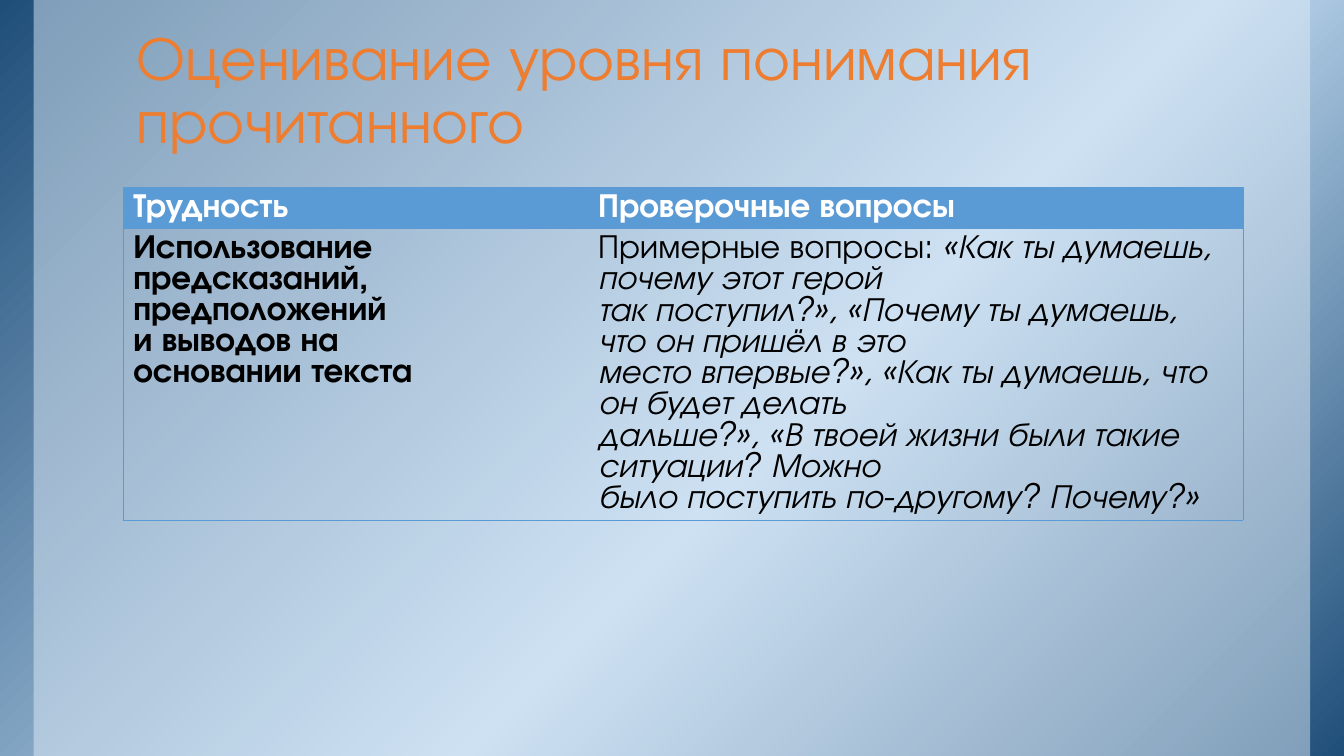
from lxml import etree
from pptx import Presentation
from pptx.dml.color import RGBColor
from pptx.enum.shapes import MSO_SHAPE
from pptx.enum.text import MSO_ANCHOR, MSO_AUTO_SIZE, PP_ALIGN
from pptx.oxml import parse_xml
from pptx.oxml.ns import qn
from pptx.util import Pt

RECTANGLE = MSO_SHAPE.RECTANGLE
BOTTOM = MSO_ANCHOR.BOTTOM
NO_AUTOFIT = MSO_AUTO_SIZE.NONE
LEFT = PP_ALIGN.LEFT
FONT = "TeX Gyre Adventor"
BLUE = "5B9BD5"
NAMESPACE = "http://schemas.openxmlformats.org/drawingml/2006/main"
PLAIN_STYLE = "{2D5ABB26-0587-4C30-8999-92F81FD0307C}"


def color(value):
    return RGBColor.from_string(value)


def set_font(font, size, value):
    font.name = FONT
    font.size = Pt(size)
    font.color.rgb = color(value)


presentation = Presentation()
presentation.slide_width = Pt(960)
presentation.slide_height = Pt(540)
slide = presentation.slides.add_slide(presentation.slide_layouts[5])

backdrop = slide.shapes.add_shape(RECTANGLE, 0, 0, Pt(960), Pt(540))
panel = slide.shapes.add_shape(RECTANGLE, Pt(24), 0, Pt(911.8), Pt(540))
for shape in (backdrop, panel):
    shape.shadow.inherit = False
    shape.line.fill.background()

stops = "".join(
    f'<a:gs pos="{position * 1000}"><a:srgbClr val="{value}"/></a:gs>'
    for position, value in ((0, "1F4E79"), (58, "BDD7EE"), (100, "1F4E79"))
)
gradient = parse_xml(
    f'<a:gradFill xmlns:a="{NAMESPACE}" rotWithShape="1"><a:gsLst>{stops}</a:gsLst>'
    '<a:lin ang="2700000" scaled="0"/></a:gradFill>'
)
backdrop._element.spPr.find(qn("a:prstGeom")).addnext(gradient)

panel.fill.solid()
panel.fill.fore_color.rgb = color("DEEBF7")
panel_color = panel._element.spPr.find(qn("a:solidFill"))[0]
etree.SubElement(panel_color, qn("a:alpha"), val="50000")

questions = [
    "«Как ты думаешь, почему этот герой",
    "так поступил?», «Почему ты думаешь, что он пришёл в это",
    "место впервые?», «Как ты думаешь, что он будет делать",
    "дальше?», «В твоей жизни были такие ситуации? Можно",
    "было поступить по-другому? Почему?»",
]
difficulty = [
    "Использование",
    "предсказаний,",
    "предположений",
    "и выводов на",
    "основании текста",
]
rows = [
    [["Трудность"], ["Проверочные вопросы"]],
    [difficulty, questions],
]
borders = [["LT", "RT"], ["LTB", "RTB"]]

frame = slide.shapes.add_table(2, 2, Pt(88), Pt(133.8), Pt(800), Pt(59))
table = frame.table
frame._element.find(".//" + qn("a:tableStyleId")).text = PLAIN_STYLE
table.columns[0].width = Pt(332)
table.columns[1].width = Pt(468)

for row_index, row in enumerate(rows):
    for column_index, lines in enumerate(row):
        cell = table.cell(row_index, column_index)
        is_header = row_index == 0
        is_questions = lines is questions
        if is_header:
            cell.fill.solid()
            cell.fill.fore_color.rgb = color(BLUE)
        else:
            cell.fill.background()
        cell.text = "\n".join(lines)
        for paragraph in cell.text_frame.paragraphs:
            set_font(paragraph.font, 24, "FFFFFF" if is_header else "000000")
            paragraph.font.bold = not is_questions
            paragraph.font.italic = is_questions
        properties = cell._tc.get_or_add_tcPr()
        for index, side in enumerate(borders[row_index][column_index]):
            properties.insert(index, parse_xml(
                f'<a:ln{side} xmlns:a="{NAMESPACE}" w="6350"><a:solidFill>'
                f'<a:srgbClr val="{BLUE}"/></a:solidFill></a:ln{side}>'
            ))

first_paragraph = table.cell(1, 1).text_frame.paragraphs[0]
first_paragraph.runs[0].text = "Примерные вопросы: "
first_paragraph.runs[0].font.italic = False
first_paragraph.add_run().text = questions[0]

title = slide.shapes.title
title.left, title.top, title.width, title.height = Pt(88), Pt(6), Pt(800), Pt(110.5)
title.text = "Оценивание уровня понимания прочитанного"
title_frame = title.text_frame
title_frame.word_wrap = True
title_frame.auto_size = NO_AUTOFIT
title_frame.vertical_anchor = BOTTOM
title_frame.margin_left = title_frame.margin_right = Pt(9.5)
title_frame.margin_top = title_frame.margin_bottom = Pt(5)
title_paragraph = title_frame.paragraphs[0]
title_paragraph.alignment = LEFT
title_paragraph.line_spacing = 0.85
set_font(title_paragraph.font, 44, "ED7D31")
slide.shapes._spTree.append(title._element)

presentation.save("out.pptx")
